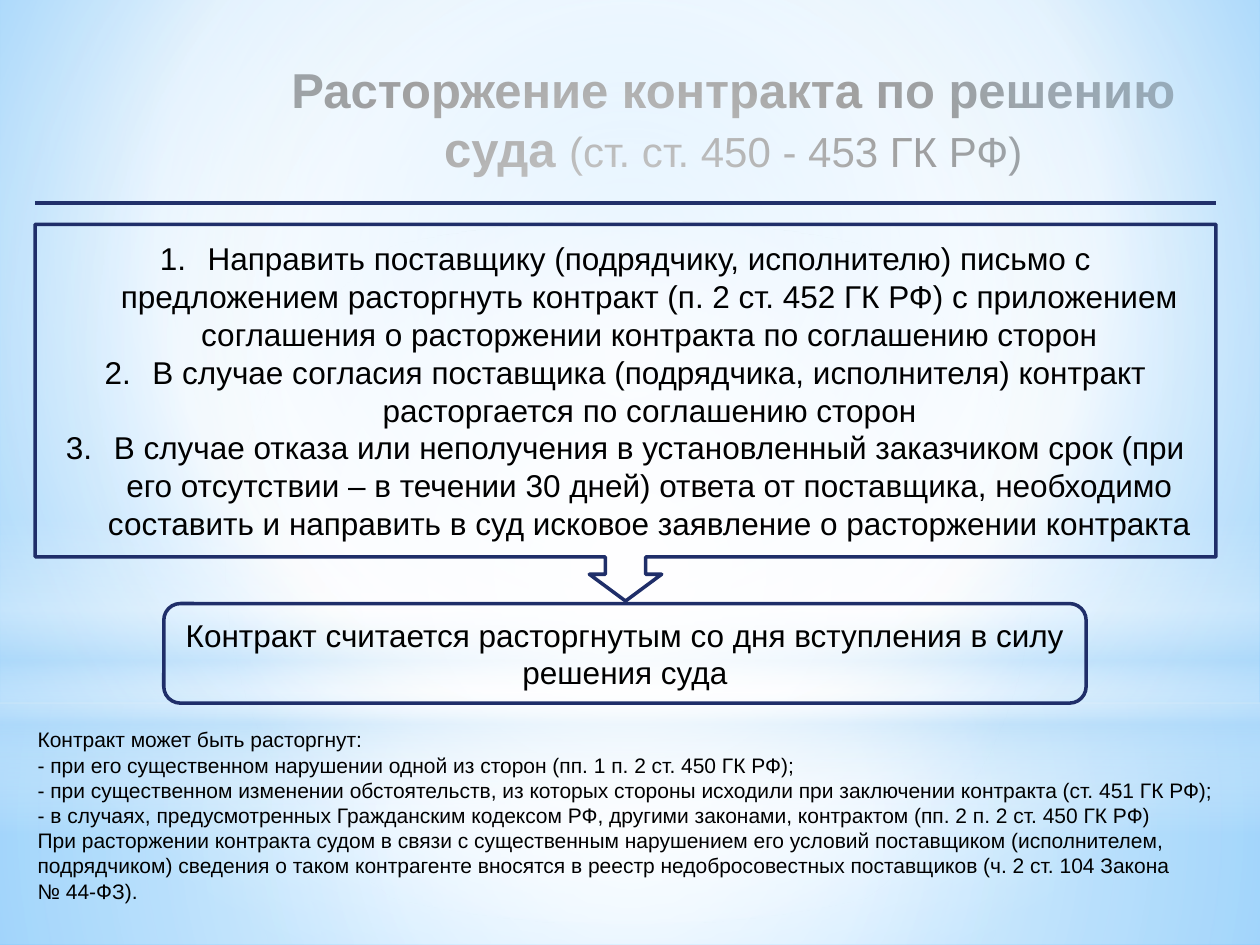
from dataclasses import dataclass

from lxml import etree
from pptx import Presentation
from pptx.dml.color import RGBColor as RGB
from pptx.enum.shapes import MSO_CONNECTOR as LineKind, MSO_SHAPE as Shape
from pptx.enum.text import MSO_ANCHOR as Anchor, PP_ALIGN as Align
from pptx.oxml import parse_xml
from pptx.oxml.ns import nsdecls, qn
from pptx.util import Inches, Pt


@dataclass(frozen=True)
class Theme:
    font: str = "Arial"
    text: RGB = RGB(0, 0, 0)
    outline: RGB = RGB(0x1F, 0x2E, 0x69)
    rule: RGB = RGB(0x21, 0x30, 0x6A)
    line_width: float = 2
    title_size: int = 28
    subtitle_size: int = 24
    body_size: int = 18
    note_size: int = 12
    white: str = "FFFFFF"
    haze: str = "B4DCFA"
    sky: str = "9ED5FF"
    deep_sky: str = "5BB9FF"


def gradient(stops, focus=None):
    """Gradient of (position, colour, opacity) stops: radial with a focus, else vertical."""
    marks = "".join(
        f'<a:gs pos="{pos * 1000}"><a:srgbClr val="{colour}">'
        f'<a:alpha val="{opacity * 1000}"/></a:srgbClr></a:gs>'
        for pos, colour, opacity in stops)
    if focus:
        sides = " ".join(f'{side}="{share * 1000}"' for side, share in zip("ltrb", focus))
        course = f'<a:path path="circle"><a:fillToRect {sides}/></a:path>'
    else:
        course = '<a:lin ang="5400000" scaled="0"/>'
    return parse_xml(f'<a:gradFill {nsdecls("a")} rotWithShape="1">'
                     f'<a:gsLst>{marks}</a:gsLst>{course}</a:gradFill>')


class SlideBuilder:
    def __init__(self, slide, theme):
        self.slide = slide
        self.theme = theme

    def style(self, item, size, align, bold=None):
        item.alignment = align
        item.font.name = self.theme.font
        item.font.size = Pt(size)
        item.font.color.rgb = self.theme.text
        item.font.bold = bold

    def background(self, stops, focus):
        fill = self.slide.background.fill
        fill.solid()
        solid = self.slide.element.find(".//" + qn("p:bgPr")).find(qn("a:solidFill"))
        solid.getparent().replace(solid, gradient(stops, focus))

    def glow(self, kind, top, height, stops, focus=None):
        band = self.slide.shapes.add_shape(kind, 0, Inches(top), Inches(10), Inches(height))
        band.shadow.inherit = False
        band.line.fill.background()
        band.fill.solid()
        solid = band.element.spPr.find(qn("a:solidFill"))
        solid.getparent().replace(solid, gradient(stops, focus))

    def title(self, box, heading, reference):
        title = self.slide.shapes.title
        title.left, title.top, title.width, title.height = map(Inches, box)
        title.text_frame.vertical_anchor = Anchor.MIDDLE
        line = title.text_frame.paragraphs[0]
        line.line_spacing = 1.0
        self.style(line, self.theme.title_size, Align.CENTER)
        for words, size, bold in ((heading, self.theme.title_size, True),
                                  (reference, self.theme.subtitle_size, False)):
            run = line.add_run()
            run.text = words
            run.font.size = Pt(size)
            run.font.bold = bold

    def rule(self, left, right, y):
        rule = self.slide.shapes.add_connector(
            LineKind.STRAIGHT, Inches(left), Inches(y), Inches(right), Inches(y))
        rule.line.color.rgb = self.theme.rule
        rule.line.width = Pt(self.theme.line_width)
        etree.SubElement(rule.element.spPr, qn("a:effectLst"))

    def paragraphs(self, frame, texts, size, align, numbered=False):
        frame.word_wrap = True
        for index, text in enumerate(texts):
            item = frame.add_paragraph() if index else frame.paragraphs[0]
            item.text = text
            if numbered:
                props = item._p.get_or_add_pPr()
                indent = Inches(0.38)
                props.set("marL", str(indent))
                props.set("indent", str(-indent))
                etree.SubElement(props, qn("a:buFont"), typeface="+mj-lt")
                etree.SubElement(props, qn("a:buAutoNum"), type="arabicPeriod")
            self.style(item, size, align)

    def outlined(self, kind, box, texts, adjustments=(), numbered=False):
        panel = self.slide.shapes.add_shape(kind, *map(Inches, box))
        panel.shadow.inherit = False
        panel.fill.background()
        panel.line.color.rgb = self.theme.outline
        panel.line.width = Pt(self.theme.line_width)
        for index, value in enumerate(adjustments):
            panel.adjustments[index] = value
        panel.text_frame.vertical_anchor = Anchor.MIDDLE
        self.paragraphs(panel.text_frame, texts, self.theme.body_size, Align.CENTER, numbered)

    def note(self, box, texts):
        note = self.slide.shapes.add_textbox(*map(Inches, box))
        self.paragraphs(note.text_frame, texts, self.theme.note_size, Align.LEFT)


STEPS = (
    "Направить поставщику (подрядчику, исполнителю) письмо с предложением расторгнуть "
    "контракт (п. 2 ст. 452 ГК РФ) с приложением соглашения о расторжении контракта "
    "по соглашению сторон",
    "В случае согласия поставщика (подрядчика, исполнителя) контракт расторгается "
    "по соглашению сторон",
    "В случае отказа или неполучения в установленный заказчиком срок (при его отсутствии – "
    "в течении 30 дней) ответа от поставщика, необходимо составить и направить в суд "
    "исковое заявление о расторжении контракта",
)
OUTCOME = "Контракт считается расторгнутым со дня вступления в силу решения суда"
GROUNDS = (
    "Контракт может быть расторгнут:",
    "- при его существенном нарушении одной из сторон (пп. 1 п. 2 ст. 450 ГК РФ);",
    "- при существенном изменении обстоятельств, из которых стороны исходили "
    "при заключении контракта (ст. 451 ГК РФ);",
    "- в случаях, предусмотренных Гражданским кодексом РФ, другими законами, "
    "контрактом (пп. 2 п. 2 ст. 450 ГК РФ)",
    "При расторжении контракта судом в связи с существенным нарушением его условий "
    "поставщиком (исполнителем, подрядчиком) сведения о таком контрагенте вносятся "
    "в реестр недобросовестных поставщиков (ч. 2 ст. 104 Закона\n№ 44-ФЗ).",
)


def main():
    deck = Presentation()
    deck.slide_width, deck.slide_height = Inches(10), Inches(7.5)
    theme = Theme()
    page = SlideBuilder(deck.slides.add_slide(deck.slide_layouts[5]), theme)
    white, haze = theme.white, theme.haze
    centre = (50, 50, 50, 50)

    # Sky backdrop: radial base, two hazes, horizon and central glow
    page.background([(0, theme.sky, 100), (60, white, 100), (100, theme.deep_sky, 100)],
                    (20, 10, 20, 60))
    page.glow(Shape.RECTANGLE, 5.58, 1.92, [(0, white, 91), (37, white, 76), (100, haze, 79)],
              centre)
    page.glow(Shape.RECTANGLE, 0, 5.58, [(0, white, 89), (48, white, 62), (100, haze, 79)],
              centre)
    page.glow(Shape.RECTANGLE, 4.12, 2.5,
              [(0, white, 0), (29, white, 30), (45, haze, 40),
               (55, white, 26), (65, haze, 60), (100, white, 0)])
    page.glow(Shape.OVAL, 1.75, 5.58, [(0, white, 100), (56, white, 0)], centre)

    # Heading
    page.title((2.21, 0.42, 7.22, 1.04), "Расторжение контракта по решению суда ",
               "(ст. ст. 450 - 453 ГК РФ)")
    page.rule(0.28, 9.65, 1.61)

    # Steps leading to the outcome
    page.outlined(Shape.DOWN_ARROW_CALLOUT, (0.28, 1.78, 9.37, 2.99), STEPS,
                  (0.107, 0.096, 0.071, 0.883), numbered=True)
    page.outlined(Shape.ROUNDED_RECTANGLE, (1.3, 4.79, 7.32, 0.79), [OUTCOME])

    # Legal grounds
    page.note((0.2, 5.72, 9.61, 1.51), GROUNDS)

    deck.save("out.pptx")


if __name__ == "__main__":
    main()
